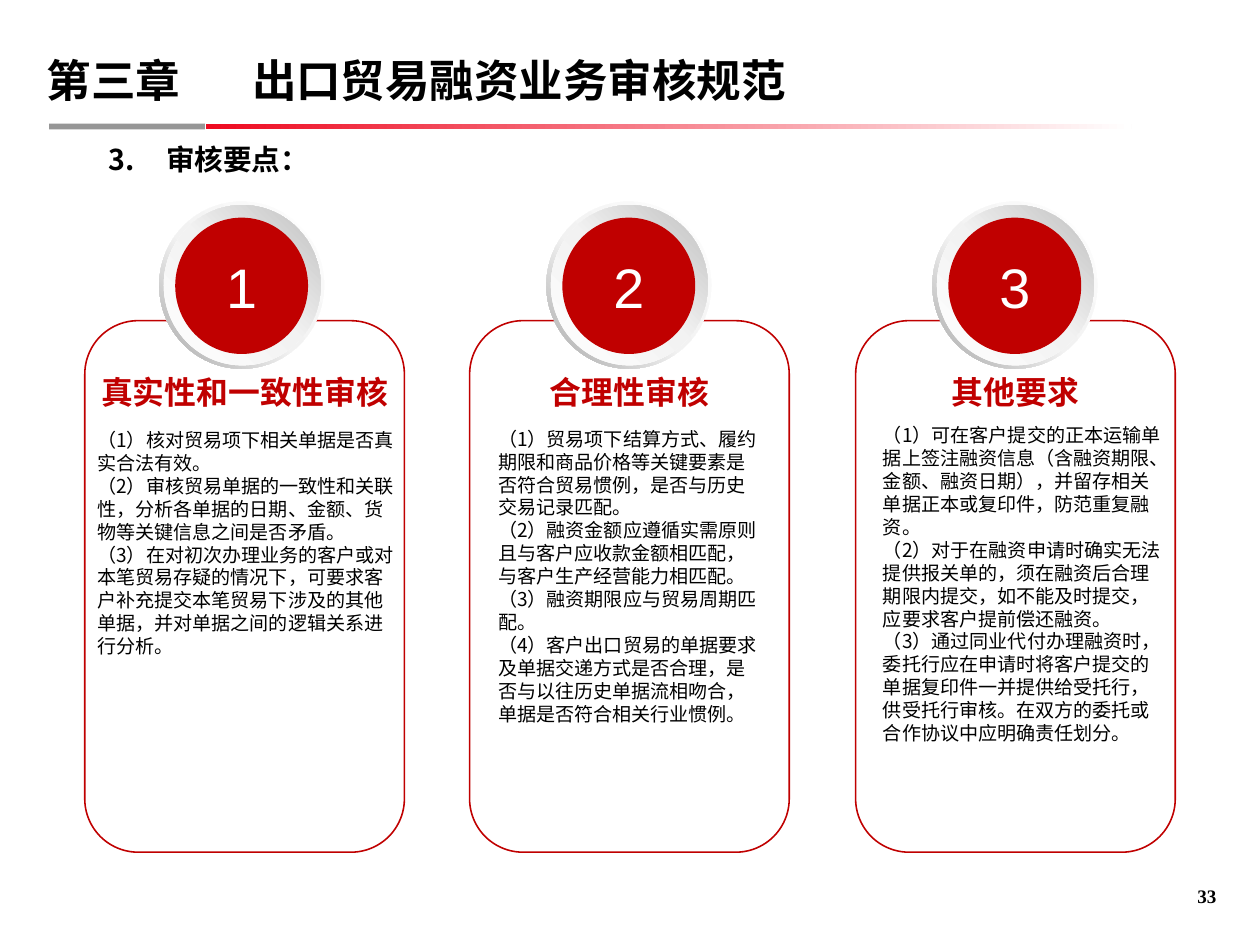
from pptx import Presentation
from pptx.dml.color import RGBColor
from pptx.enum.shapes import MSO_SHAPE
from pptx.enum.text import MSO_ANCHOR, PP_ALIGN
from pptx.oxml.ns import qn
from pptx.oxml.xmlchemy import OxmlElement
from pptx.util import Pt

RECT, OVAL = MSO_SHAPE.RECTANGLE, MSO_SHAPE.OVAL
ROUND, DONUT = MSO_SHAPE.ROUNDED_RECTANGLE, MSO_SHAPE.DONUT
TOP, MIDDLE, BOTTOM = MSO_ANCHOR.TOP, MSO_ANCHOR.MIDDLE, MSO_ANCHOR.BOTTOM
LEFT, CENTER, RIGHT = PP_ALIGN.LEFT, PP_ALIGN.CENTER, PP_ALIGN.RIGHT
EMU_PER_PX = 9144
SANS, DIGIT, SERIF = "Noto Sans CJK SC", "Arial", "Times New Roman"
RED, BLACK, WHITE, GREY = "C00000", "000000", "FFFFFF", "969696"
RIM = [(0, WHITE), (55, "F2F2F2"), (100, "A6A6A6")]
DISC = [(0, WHITE), (51, "F2F2F2"), (100, "BFBFBF")]
RULE = [(0, "EE0A20"), (100, WHITE)]

CARDS = [
    (74, 139, "真实性和一致性审核", (85, 374, 260, 202), (0, 0), [
        "（1）核对贸易项下相关单据是否真实合法有效。",
        "（2）审核贸易单据的一致性和关联性，分析各单据的日期、金额、货物等关键信息之间是否矛盾。",
        "（3）在对初次办理业务的客户或对本笔贸易存疑的情况下，可要求客户补充提交本笔贸易下涉及的"
        "其他单据，并对单据之间的逻辑关系进行分析。",
    ]),
    (410, 477, "合理性审核", (425, 368, 250, 273), (10, 5), [
        "（1）贸易项下结算方式、履约期限和商品价格等关键要素是否符合贸易惯例，是否与历史交易记录匹配。",
        "（2）融资金额应遵循实需原则且与客户应收款金额相匹配，与客户生产经营能力相匹配。",
        "（3）融资期限应与贸易周期匹配。",
        "（4）客户出口贸易的单据要求及单据交递方式是否合理，是否与以往历史单据流相吻合，"
        "单据是否符合相关行业惯例。",
    ]),
    (747, 814, "其他要求", (761, 365, 265, 293), (10, 5), [
        "（1）可在客户提交的正本运输单据上签注融资信息（含融资期限、金额、融资日期），"
        "并留存相关单据正本或复印件，防范重复融资。",
        "（2）对于在融资申请时确实无法提供报关单的，须在融资后合理期限内提交，如不能及时提交，"
        "应要求客户提前偿还融资。",
        "（3）通过同业代付办理融资时，委托行应在申请时将客户提交的单据复印件一并提供给受托行，"
        "供受托行审核。在双方的委托或合作协议中应明确责任划分。",
    ]),
]


def px(n):
    """Turn px into EMU."""
    return n * EMU_PER_PX


def rgb(color):
    """Turn a hex string into a colour."""
    return RGBColor.from_string(color)


def add_xml(parent, tag, **attrs):
    """Append a child element with attributes."""
    child = OxmlElement(tag)
    for key, value in attrs.items():
        child.set(key, str(value))
    parent.append(child)
    return child


class Deck:
    """Hold the style and the current slide."""

    def __init__(self, width, height):
        """Open a presentation with one blank slide."""
        self.prs = Presentation()
        self.prs.slide_width, self.prs.slide_height = px(width), px(height)
        self.s = self.prs.slides.add_slide(self.prs.slide_layouts[6])

    def shape(self, kind, box, fill=None, line=None, adj=None):
        """Add a preset shape with a flat fill or none."""
        sp = self.s.shapes.add_shape(kind, *map(px, box))
        sp.shadow.inherit = False
        if adj is not None:
            sp.adjustments[0] = adj
        if fill:
            sp.fill.solid()
            sp.fill.fore_color.rgb = rgb(fill)
        else:
            sp.fill.background()
        if line:
            sp.line.color.rgb = rgb(line)
            sp.line.width = Pt(1)
        else:
            sp.line.fill.background()
        return sp

    def gradient(self, kind, box, stops, angle, adj=None):
        """Add a preset shape with a linear gradient, angle clockwise."""
        sp = self.shape(kind, box, adj=adj)
        sp.fill.gradient()
        sp.fill.gradient_angle = (360 - angle) % 360
        stop_list = next(sp.element.spPr.iter(qn("a:gsLst")))
        stop_list.clear()
        for pos, color in stops:
            gs = add_xml(stop_list, "a:gs", pos=pos * 1000)
            add_xml(gs, "a:srgbClr", val=color)

    def set_text(self, sp, lines, size, color=BLACK, font=SANS, bold=False,
                 align=LEFT, anchor=TOP, inset=(0, 0)):
        """Fill a shape with paragraphs and return its text frame."""
        tf = sp.text_frame
        tf.word_wrap = True
        tf.vertical_anchor = anchor
        tf.margin_left = tf.margin_right = px(inset[0])
        tf.margin_top = tf.margin_bottom = px(inset[1])
        for i, line in enumerate(lines):
            p = tf.add_paragraph() if i else tf.paragraphs[0]
            p.alignment = align
            r = p.add_run()
            r.text = line
            r.font.size, r.font.bold, r.font.name = Pt(size), bold, font
            r.font.color.rgb = rgb(color)
            add_xml(r._r.get_or_add_rPr(), "a:ea", typeface=font)
        return tf

    def text(self, box, lines, size, **style):
        """Add a text box."""
        sp = self.s.shapes.add_textbox(*map(px, box))
        return self.set_text(sp, lines, size, **style)

    def title(self, box, chapter, name, gap):
        """Add the title with a tab between chapter and name."""
        tf = self.text(box, [f"{chapter}\t{name}"], 28, bold=True, anchor=BOTTOM)
        p = tf.paragraphs[0]
        p.line_spacing = 0.85
        tabs = add_xml(p._p.get_or_add_pPr(), "a:tabLst")
        add_xml(tabs, "a:tab", pos=px(gap), algn="l")

    def numbered(self, box, line, start):
        """Add a numbered heading."""
        p = self.text(box, [line], 18, bold=True).paragraphs[0]
        p.line_spacing, p.space_before = 1.5, Pt(5)
        pPr = p._p.get_or_add_pPr()
        pPr.set("marL", str(px(75)))
        pPr.set("indent", str(px(-50)))
        add_xml(pPr, "a:buFont", typeface=SANS)
        add_xml(pPr, "a:buAutoNum", type="arabicPeriod", startAt=start)

    def card(self, number, left, badge, heading, body_box, inset, lines):
        """Add a framed card with a numbered badge, heading and body."""
        self.shape(ROUND, (left, 280, 279, 464), line=RED, adj=0.167)
        self.gradient(DONUT, (badge, 176, 144, 146), RIM, 135, adj=0.049)
        self.gradient(OVAL, (badge + 4, 179, 137, 140), DISC, 315)
        sp = self.shape(OVAL, (badge + 14, 190, 116, 119), RED)
        self.set_text(sp, [str(number)], 35, color=WHITE, font=DIGIT,
                      align=CENTER, anchor=MIDDLE, inset=(9, 4))
        self.text((left, 321, 279, 42), [heading], 20, color=RED, bold=True,
                  align=CENTER, inset=(9, 4))
        self.text(body_box, lines, 12, inset=inset)


def main():
    """Build the slide."""
    deck = Deck(1100, 825)
    deck.shape(RECT, (43, 108, 136, 5), GREY)
    deck.gradient(RECT, (180, 108, 808, 5), RULE, 0)
    deck.title((41, 33, 871, 60), "第三章", "出口贸易融资业务审核规范", 179)
    deck.numbered((70, 109, 943, 60), "审核要点：", 3)
    for number, card in enumerate(CARDS, 1):
        deck.card(number, *card)
    deck.text((1017, 750, 45, 42), ["33"], 12, font=SERIF, bold=True,
              align=RIGHT, anchor=BOTTOM)
    deck.prs.save("out.pptx")


if __name__ == "__main__":
    main()
